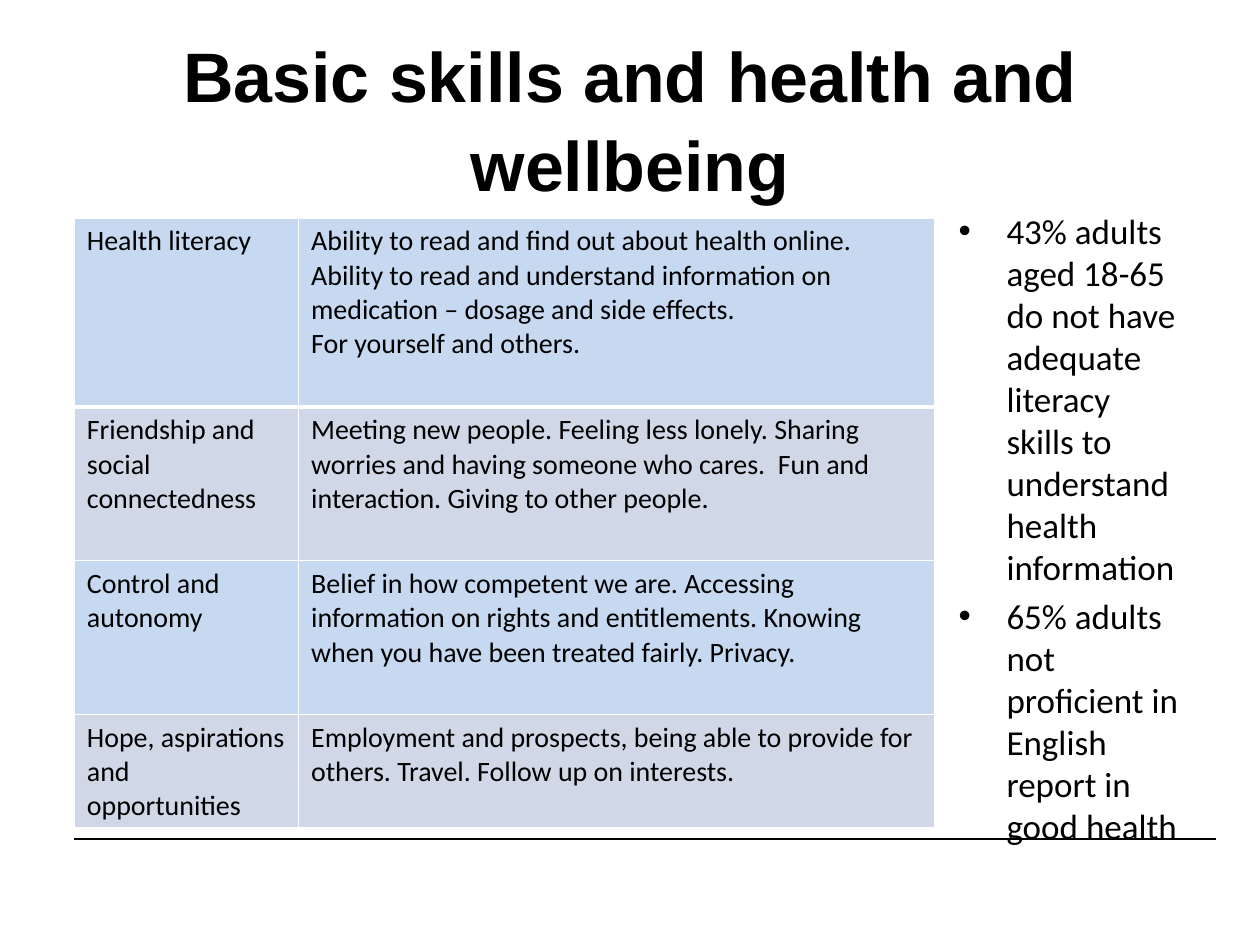
from dataclasses import dataclass

from lxml.etree import SubElement
from pptx import Presentation
from pptx.dml.color import RGBColor
from pptx.enum.shapes import MSO_CONNECTOR
from pptx.enum.text import MSO_ANCHOR, PP_ALIGN
from pptx.oxml.ns import qn
from pptx.util import Inches, Pt

BLACK, WHITE = "000000", "FFFFFF"
BANDS = ("C6D9F1", "D0D8E8")
COLUMN_WIDTHS = (1.78, 5.05)
THIN, THICK = 1, 3


@dataclass
class Theme:
    name: str
    details: tuple[str, ...]
    height: float


THEMES = (
    Theme("Health literacy", (
        "Ability to read and find out about health online.",
        "Ability to read and understand information on medication – dosage and side effects.",
        "For yourself and others.",
    ), 1.5),
    Theme("Friendship and social connectedness", (
        "Meeting new people. Feeling less lonely. Sharing worries and having someone who cares.  "
        "Fun and interaction. Giving to other people.",
    ), 1.22),
    Theme("Control and autonomy", (
        "Belief in how competent we are. Accessing information on rights and entitlements. "
        "Knowing when you have been treated fairly. Privacy.",
    ), 1.22),
    Theme("Hope, aspirations and opportunities", (
        "Employment and prospects, being able to provide for others. Travel. Follow up on interests.",
    ), 0.9),
)

FACTS = (
    "43% adults aged 18-65 do not have adequate literacy skills to understand health information",
    "65% adults not proficient in English report in good health",
)

TITLE_FONT = {"name": "Arial", "size": Pt(40), "bold": True}
FACT_FONT = {"name": "Calibri", "size": Pt(20), "bold": False}
CELL_FONT = {"name": "Calibri", "size": Pt(16), "bold": False}


def colour(value: str) -> RGBColor:
    return RGBColor.from_string(value)


def write(frame, lines: tuple[str, ...], font: dict, layout: dict | None = None) -> None:
    frame.word_wrap = True
    for index, line in enumerate(lines):
        para = frame.add_paragraph() if index else frame.paragraphs[0]
        for key, value in (layout or {}).items():
            setattr(para, key, value)
        span = para.add_run()
        span.text = line
        for key, value in font.items():
            setattr(span.font, key, value)
        span.font.color.rgb = colour(BLACK)


def add_bullets(frame, indent: float) -> None:
    for para in frame.paragraphs:
        properties = para._p.get_or_add_pPr()
        properties.set("marL", str(Inches(indent)))
        properties.set("indent", str(-Inches(indent)))
        SubElement(properties, qn("a:buFont"), typeface="Arial")
        SubElement(properties, qn("a:buChar"), char="•")


def add_borders(cell, widths: dict[str, float]) -> None:
    properties = cell._tc.get_or_add_tcPr()
    for position, (side, width) in enumerate(widths.items()):
        border = properties.makeelement(qn(f"a:{side}"), {"w": str(Pt(width))})
        fill = SubElement(border, qn("a:solidFill"))
        SubElement(fill, qn("a:srgbClr"), val=WHITE)
        properties.insert(position, border)


def add_rule(page) -> None:
    rule = page.shapes.add_connector(
        MSO_CONNECTOR.STRAIGHT, Inches(0.59), Inches(6.66), Inches(9.65), Inches(6.66))
    rule.line.color.rgb = colour(BLACK)
    rule.line.width = Pt(0.75)
    SubElement(rule._element.spPr, qn("a:effectLst"))


def add_title(page) -> None:
    box = page.shapes.add_textbox(Inches(0.5), Inches(0.3), Inches(9), Inches(1.25))
    box.text_frame.vertical_anchor = MSO_ANCHOR.MIDDLE
    write(box.text_frame, ("Basic skills and health and wellbeing",), TITLE_FONT,
          {"alignment": PP_ALIGN.CENTER, "line_spacing": 1.06})


def add_facts(page) -> None:
    box = page.shapes.add_textbox(Inches(7.51), Inches(1.61), Inches(1.99), Inches(5.09))
    write(box.text_frame, FACTS, FACT_FONT, {"space_before": Pt(4)})
    add_bullets(box.text_frame, 0.38)


def add_themes(page) -> None:
    height = sum(theme.height for theme in THEMES)
    table = page.shapes.add_table(
        len(THEMES), len(COLUMN_WIDTHS), Inches(0.59), Inches(1.73),
        Inches(sum(COLUMN_WIDTHS)), Inches(height)).table
    table.first_row = table.horz_banding = False
    for column, width in zip(table.columns, COLUMN_WIDTHS):
        column.width = Inches(width)
    for index, (row, theme) in enumerate(zip(table.rows, THEMES)):
        row.height = Inches(theme.height)
        borders = {"lnL": THIN, "lnR": THIN,
                   "lnT": THICK if index == 1 else THIN,
                   "lnB": THICK if index == 0 else THIN}
        for cell, lines in zip(row.cells, ((theme.name,), theme.details)):
            cell.fill.solid()
            cell.fill.fore_color.rgb = colour(BANDS[index % len(BANDS)])
            write(cell.text_frame, lines, CELL_FONT)
            add_borders(cell, borders)


def main() -> None:
    deck = Presentation()
    deck.slide_width, deck.slide_height = Inches(10), Inches(7.5)
    page = deck.slides.add_slide(deck.slide_layouts[6])
    add_rule(page)
    add_title(page)
    add_facts(page)
    add_themes(page)
    deck.save("out.pptx")


if __name__ == "__main__":
    main()
